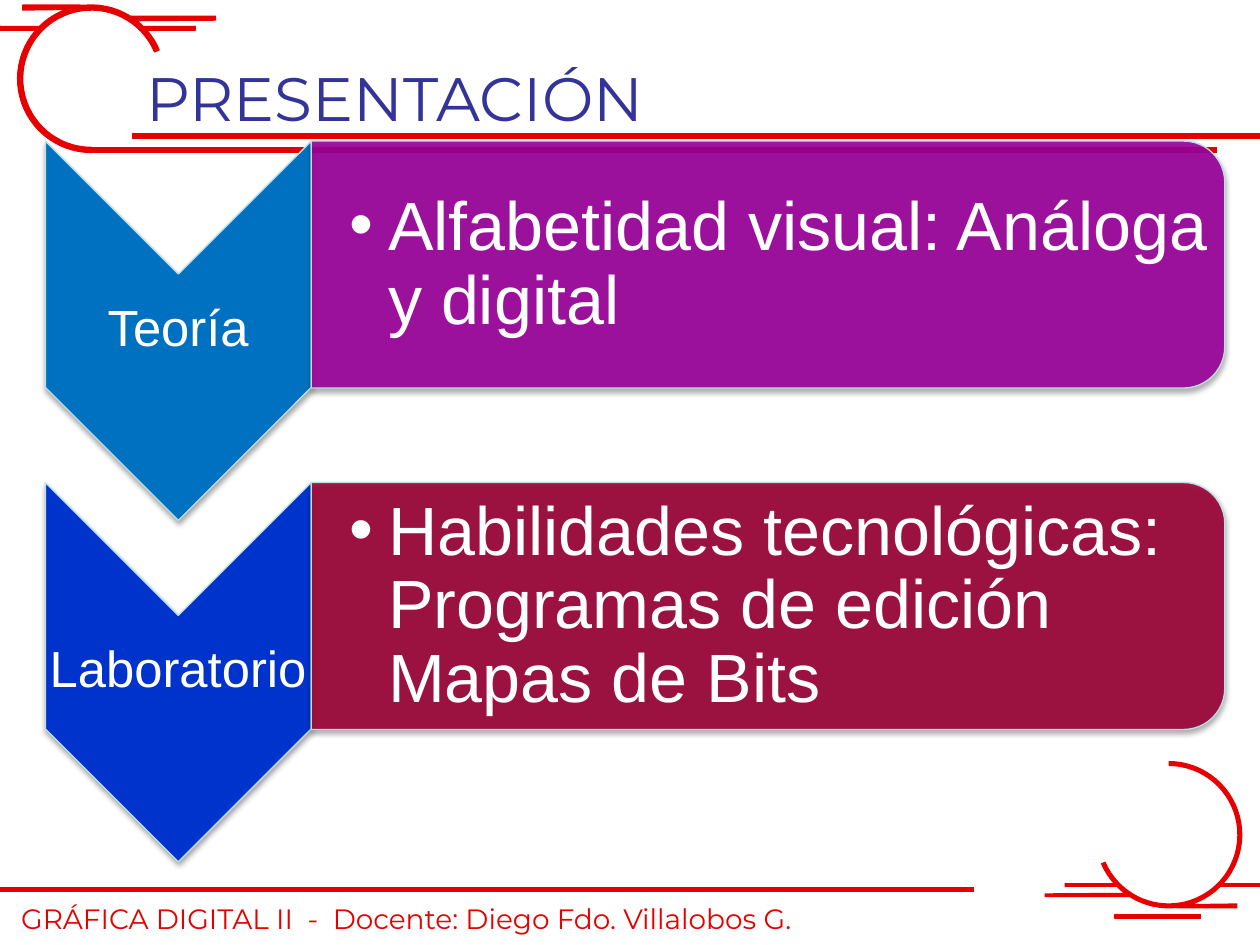
import math

import pptx
import pptx.dml.color
import pptx.enum.shapes
import pptx.enum.text
import pptx.oxml
import pptx.oxml.ns
import pptx.util
from pptx.util import Inches, Pt

TITLE = "PRESENTACIÓN"
FOOTER = "GRÁFICA DIGITAL II  -  Docente: Diego Fdo. Villalobos G."
ROWS = [
    ("Teoría", "0070C0", "Alfabetidad visual: Análoga y digital", "990099"),
    ("Laboratorio", "0033CC",
     "Habilidades tecnológicas: Programas de edición Mapas de Bits", "990033"),
]
RULES = [  # x1, x2, y, width in points
    (0, 7.73, 7.06, 2.5),
    (1.05, 10, 1.08, 3.22),
    (0.7, 9.66, 1.19, 3.22),
]
COLORS = {"red": "E60000", "title": "333399", "edge": "BBE0E3", "text": "FFFFFF"}
ROW_TOP, ROW_STEP = 1.12, 2.71
CHEVRON = (0.36, 2.11, 3.01)  # left, width, height as seen
PANEL = (2.47, 7.25, 1.96)

SHAPE = pptx.enum.shapes.MSO_SHAPE
ALIGN = pptx.enum.text.PP_ALIGN
ANCHOR = pptx.enum.text.MSO_ANCHOR
A_NS = pptx.oxml.ns.nsdecls("a")


def rgb(value):
    return pptx.dml.color.RGBColor.from_string(value)


def add_xml(parent, xml):
    parent.append(pptx.oxml.parse_xml(xml))


def style(sp, fill, edge=None):
    sp.shadow.inherit = False
    sp.fill.solid()
    sp.fill.fore_color.rgb = rgb(fill)
    if edge:
        sp.line.color.rgb = rgb(edge)
        sp.line.width = Pt(0.75)
    else:
        sp.line.fill.background()


def arc(radius, start, end):
    """Points on the ornament's circle, in degrees clockwise from the right."""
    steps = max(2, round(abs(end - start) / 5))
    angles = (math.radians(start + (end - start) * i / steps) for i in range(steps + 1))
    return [(0.725 + radius * math.cos(a), 0.625 + radius * math.sin(a)) for a in angles]


def ornament_outline():
    outer, inner = 0.585, 0.545
    return (
        arc(outer, 221, 90) + arc(inner, 90, 337) + arc(outer, 337, 319)
        + [(1.55, 0.24), (1.55, 0.21)] + arc(outer, 315, 308)
        + [(1.71, 0.16), (1.71, 0.13)] + arc(outer, 302, 266)
        + [(0.18, 0.04), (0.18, 0.08)] + arc(outer, 250, 225)
        + [(0, 0.21), (0, 0.24)]
    )


def add_ornament(s, points, edge=None):
    pts = [(Inches(x), Inches(y)) for x, y in points]
    builder = s.shapes.build_freeform(*pts[0], scale=1.0)
    builder.add_line_segments(pts[1:], close=True)
    style(builder.convert_to_shape(), COLORS["red"], edge)


def add_rule(s, x1, x2, y, width):
    line = s.shapes.add_connector(pptx.enum.shapes.MSO_CONNECTOR.STRAIGHT,
                                  Inches(x1), Inches(y), Inches(x2), Inches(y))
    line.line.color.rgb = rgb(COLORS["red"])
    line.line.width = Pt(width)
    add_xml(line.element.spPr, f"<a:effectLst {A_NS}/>")


def add_turned(s, kind, left, top, width, height, fill):
    """Add a shape turned 90 degrees whose visible frame is the one given."""
    x, y = left + (width - height) / 2, top + (height - width) / 2
    sp = s.shapes.add_shape(kind, Inches(x), Inches(y), Inches(height), Inches(width))
    sp.rotation = 90
    style(sp, fill, COLORS["edge"])
    sp.element.spPr.find(pptx.oxml.ns.qn("a:effectLst")).append(pptx.oxml.parse_xml(
        f'<a:outerShdw {A_NS} blurRad="{Pt(3.1)}" dist="{Pt(1.8)}" dir="5400000" '
        'rotWithShape="0"><a:srgbClr val="000000"><a:alpha val="35000"/>'
        "</a:srgbClr></a:outerShdw>"))
    return sp


def write(sp, frame, text, font, size, color, margins=(0.1, 0.05, 0.1, 0.05),
          anchor=ANCHOR.TOP, align=ALIGN.LEFT, wrap=True):
    sp.left, sp.top, sp.width, sp.height = map(Inches, frame)
    tf = sp.text_frame
    tf.word_wrap = wrap
    tf.auto_size = pptx.enum.text.MSO_AUTO_SIZE.NONE
    tf.vertical_anchor = anchor
    tf.margin_left, tf.margin_top, tf.margin_right, tf.margin_bottom = map(Inches, margins)
    p = tf.paragraphs[0]
    p.alignment = align
    p.space_before = Pt(0)
    r = p.add_run()
    r.text = text
    r.font.name, r.font.size = font, Pt(size)
    r.font.color.rgb = rgb(color)
    return p


def bring_to_front(sp):
    sp.element.getparent().append(sp.element)


def add_row(s, top, label, label_fill, body, panel_fill, placeholder):
    left, width, height = CHEVRON
    add_turned(s, SHAPE.CHEVRON, left, top, width, height, label_fill)
    box = s.shapes.add_textbox(0, 0, 0, 0)
    p = write(box, (left, top + 1.05, width, 0.9), label, "Arial", 29, COLORS["text"],
              (0.02,) * 4, ANCHOR.MIDDLE, ALIGN.CENTER)
    p.line_spacing = 0.9

    left, width, height = PANEL
    panel = add_turned(s, SHAPE.ROUND_2_SAME_RECTANGLE, left, top, width, height, panel_fill)
    color = panel.element.spPr.find(".//" + pptx.oxml.ns.qn("a:srgbClr"))
    add_xml(color, f'<a:alpha {A_NS} val="90000"/>')

    bring_to_front(placeholder)
    p = write(placeholder, (left, top + 0.1, 7.15, 1.77), body, "Arial", 39, COLORS["text"],
              (0.3, 0.03, 0.03, 0.03), ANCHOR.MIDDLE)
    p.line_spacing = 0.9
    pPr = p._p.get_or_add_pPr()
    pPr.set("marL", str(Inches(0.31)))
    pPr.set("indent", str(-Inches(0.31)))
    add_xml(pPr, f'<a:buChar {A_NS} char="•"/>')


def main():
    prs = pptx.Presentation()
    prs.slide_width, prs.slide_height = Inches(10), Inches(7.5)
    s = prs.slides.add_slide(prs.slide_layouts.get_by_name("Two Content"))
    title, *bodies = s.placeholders

    outline = ornament_outline()
    add_ornament(s, [(10 - x, 7.25 - y) for x, y in outline])
    dash = s.shapes.add_shape(SHAPE.RECTANGLE, *map(Inches, (8.85, 7.26, 0.68, 0.03)))
    style(dash, COLORS["red"], COLORS["red"])
    add_ornament(s, outline, COLORS["red"])
    for rule in RULES:
        add_rule(s, *rule)
    write(s.shapes.add_textbox(0, 0, 0, 0), (0.07, 7.11, 7.14, 0.37), FOOTER,
          "Montserrat", 16, COLORS["red"], wrap=False)

    bring_to_front(title)
    write(title, (1.06, 0.43, 4.95, 0.68), TITLE, "Montserrat", 35, COLORS["title"])
    for i, (row, body) in enumerate(zip(ROWS, bodies)):
        add_row(s, ROW_TOP + i * ROW_STEP, *row, body)
    prs.save("out.pptx")


if __name__ == "__main__":
    main()
